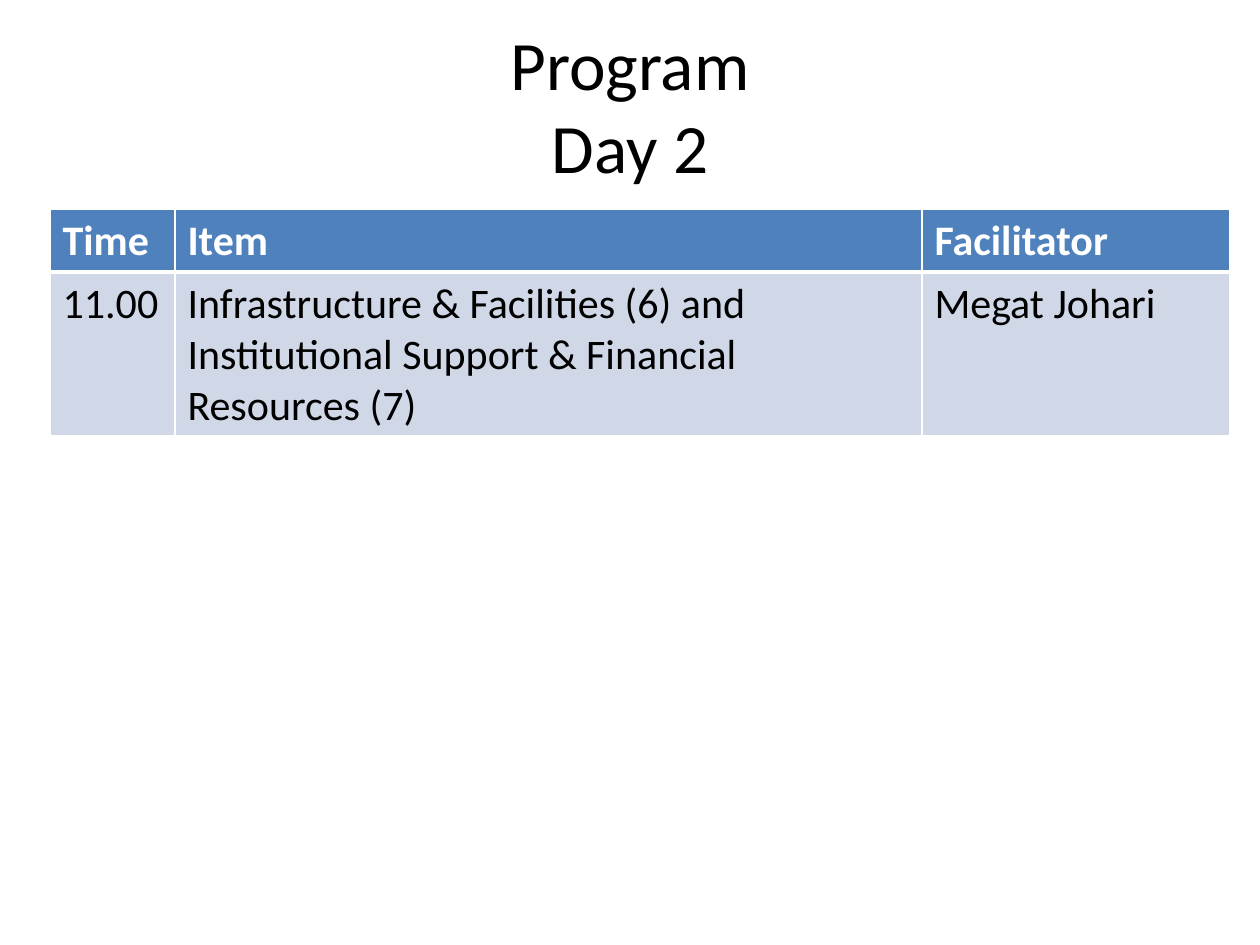
from lxml import etree
from pptx import Presentation
from pptx import util as u
from pptx.dml.color import RGBColor
from pptx.enum import text
from pptx.oxml import ns

BLACK = RGBColor(0x00, 0x00, 0x00)
WHITE = RGBColor(0xFF, 0xFF, 0xFF)
HEADER_BLUE = RGBColor(0x4F, 0x81, 0xBD)
ROW_BLUE = RGBColor(0xD0, 0xD8, 0xE8)
PX = u.Inches(1) // 126


def write(frame, words, size=24, color=BLACK, bold=False, align=text.PP_ALIGN.LEFT):
    paragraph = frame.paragraphs[0]
    paragraph.text = words
    paragraph.alignment = align
    for run in paragraph.runs:
        run.font.name = "Calibri"
        run.font.size = u.Pt(size)
        run.font.bold = bold
        run.font.color.rgb = color


def set_borders(cell, color=WHITE, **widths):
    """Draw solid cell borders; widths are in points, keyed L, R, T, B."""
    properties = cell._tc.get_or_add_tcPr()
    for position, side in enumerate("LRTB"):
        line = etree.Element(ns.qn(f"a:ln{side}"), w=str(u.Pt(widths.get(side, 1))))
        fill = etree.SubElement(line, ns.qn("a:solidFill"))
        etree.SubElement(fill, ns.qn("a:srgbClr"), val=str(color))
        properties.insert(position, line)


class ProgramSlide:
    def __init__(self, deck):
        self.slide = deck.slides.add_slide(deck.slide_layouts[6])

    def title(self, words, *box):
        frame = self.slide.shapes.add_textbox(*(n * PX for n in box)).text_frame
        frame.word_wrap = True
        frame.vertical_anchor = text.MSO_ANCHOR.MIDDLE
        write(frame, words, size=39.6, align=text.PP_ALIGN.CENTER)

    def table(self, rows, left, top, widths, row_height):
        table = self.slide.shapes.add_table(
            len(rows), len(widths), left * PX, top * PX,
            sum(widths) * PX, len(rows) * row_height * PX).table
        for column, width in zip(table.columns, widths):
            column.width = width * PX
        for r, row in enumerate(rows):
            header = r == 0
            for c, words in enumerate(row):
                cell = table.cell(r, c)
                cell.fill.solid()
                cell.fill.fore_color.rgb = HEADER_BLUE if header else ROW_BLUE
                # The rule under the header is the heavy one
                set_borders(cell, T=3 if r == 1 else 1, B=3 if header else 1)
                write(cell.text_frame, words, bold=header,
                      color=WHITE if header else BLACK)


def main():
    deck = Presentation()
    deck.slide_width, deck.slide_height = u.Inches(10), u.Inches(7.5)
    page = ProgramSlide(deck)

    # Heading
    page.title("Program\vDay 2", 63, 25, 1134, 158)

    # Schedule
    schedule = [
        ("Time", "Item", "Facilitator"),
        ("11.00",
         "Infrastructure & Facilities (6) and Institutional Support & Financial Resources (7)",
         "Megat Johari"),
    ]
    page.table(schedule, 50, 209, widths=(125, 747, 308), row_height=52)

    deck.save("out.pptx")


if __name__ == "__main__":
    main()
